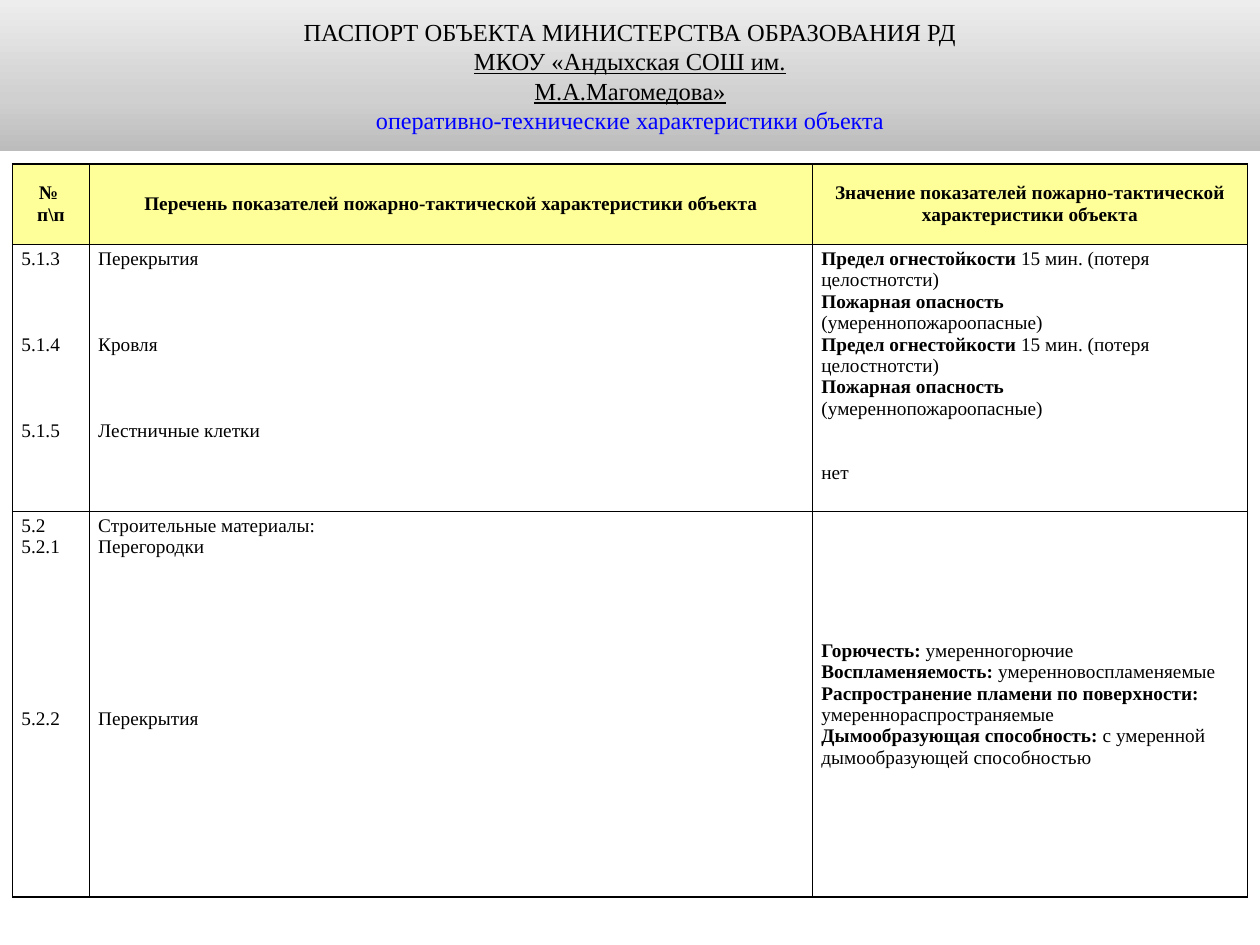
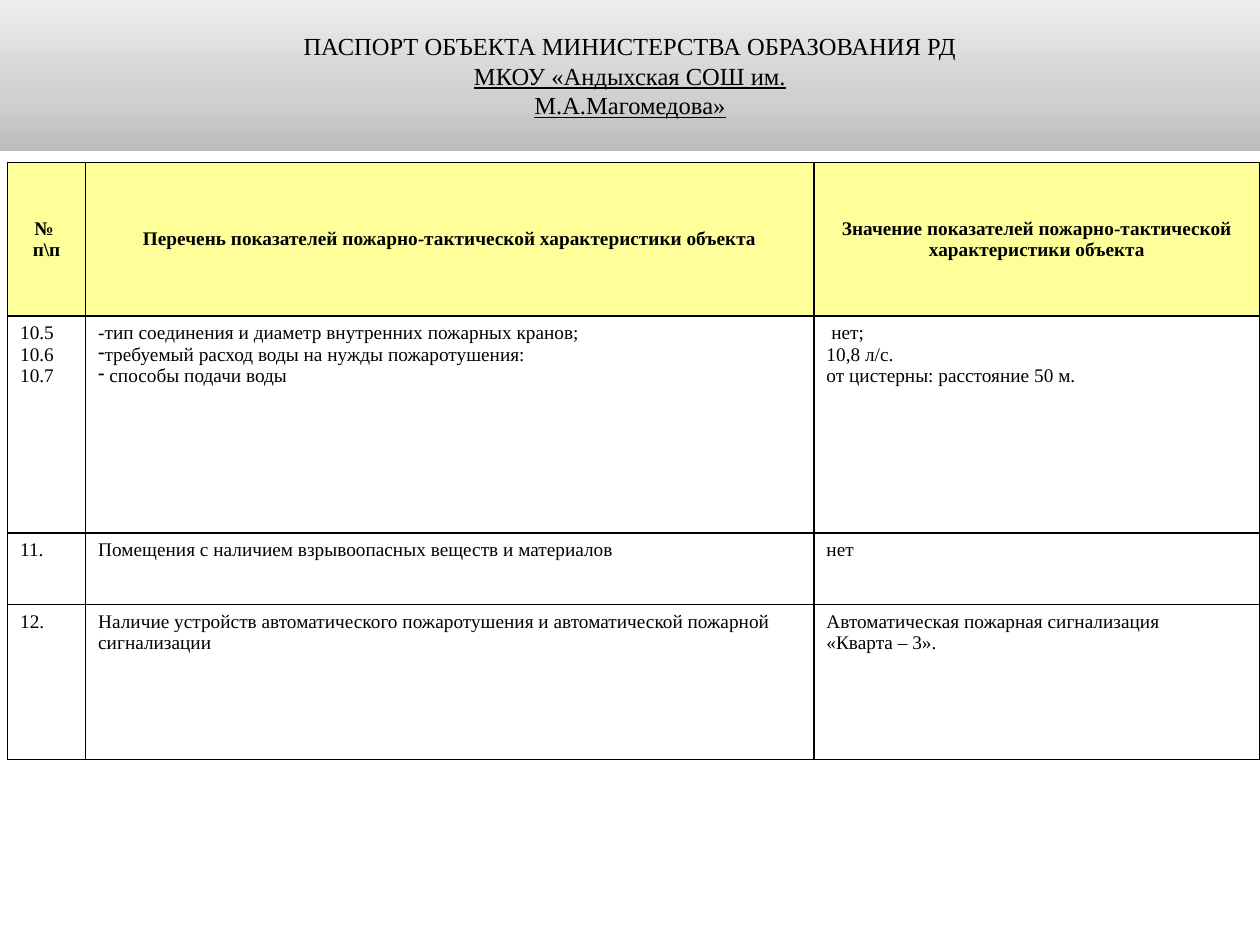
from dataclasses import dataclass

from lxml.etree import SubElement
from pptx import Presentation
from pptx.dml.color import RGBColor
from pptx.enum.text import MSO_ANCHOR, MSO_AUTO_SIZE, PP_ALIGN
from pptx.oxml import parse_xml
from pptx.oxml.ns import nsdecls, qn
from pptx.util import Inches, Pt

FONT = "Times New Roman"
COLORS = {
    "text": "000000",
    "accent": "0000FF",
    "border": "000000",
    "header": "FFFF99",
    "cell": "FFFFFF",
    "band_bottom": "BCBCBC",
    "band_middle": "D0D0D0",
    "band_top": "EDEDED",
}
BAND_STOPS = ((0, "band_bottom"), (35, "band_middle"), (100, "band_top"))
TABLE_SIZE, TITLE_SIZE = 11, 14
BLANK_LINE = 12.3  # points


@dataclass
class Line:
    """One paragraph: an optional bold lead, then text, after some blank lines."""
    text: str = ""
    lead: str = ""
    blank: int = 0
    bullet: str = ""
    underline: bool = False
    color: str = "text"
    size: float = 0


def write(tf, lines, size=TABLE_SIZE, bold=False, align=PP_ALIGN.LEFT):
    """Fill a text frame; each line is a string or a Line."""
    for i, line in enumerate(lines):
        if isinstance(line, str):
            line = Line(line)
        p = tf.paragraphs[0] if i == 0 else tf.add_paragraph()
        p.alignment = align
        p.space_before = Pt(line.blank * BLANK_LINE)
        if line.bullet:
            SubElement(p._p.get_or_add_pPr(), qn("a:buChar"), char=line.bullet)
        for text, is_bold in ((line.lead, True), (line.text, bold)):
            if not text:
                continue
            r = p.add_run()
            r.text = text
            r.font.name = FONT
            r.font.size = Pt(line.size or size)
            r.font.bold = is_bold
            r.font.underline = line.underline
            r.font.color.rgb = RGBColor.from_string(COLORS[line.color])


class Deck:
    def __init__(self):
        self.prs = Presentation()
        self.prs.slide_width, self.prs.slide_height = Inches(10), Inches(7.5)
        self.s = None

    def add_slide(self, title):
        self.s = self.prs.slides.add_slide(self.prs.slide_layouts[5])
        self.title_band(title)

    def title_band(self, lines):
        sp = self.s.shapes.title
        sp.left, sp.top, sp.width, sp.height = map(Inches, (0, 0, 10, 1.2))
        stops = "".join(
            f'<a:gs pos="{pos * 1000}"><a:srgbClr val="{COLORS[name]}"/></a:gs>'
            for pos, name in BAND_STOPS)
        sp._element.spPr.append(parse_xml(
            f'<a:gradFill {nsdecls("a")} rotWithShape="1"><a:gsLst>{stops}</a:gsLst>'
            '<a:lin ang="16200000" scaled="0"/></a:gradFill>'))
        tf = sp.text_frame
        tf.auto_size, tf.word_wrap = MSO_AUTO_SIZE.NONE, True
        tf.vertical_anchor = MSO_ANCHOR.MIDDLE
        tf.margin_left = tf.margin_right = Inches(0.08)
        tf.margin_top = tf.margin_bottom = Inches(0.04)
        write(tf, lines, size=TITLE_SIZE, align=PP_ALIGN.CENTER)

    def table(self, left, top, widths, heights, rows, margins, middle=()):
        """Draw the header and rows; middle lists the (row, column) cells centred vertically."""
        frame = self.s.shapes.add_table(
            len(heights), len(widths), Inches(left), Inches(top),
            Inches(sum(widths)), Inches(sum(heights)))
        table = frame.table
        table.horz_banding = False
        for column, width in zip(table.columns, widths):
            column.width = Inches(width)
        for row, height in zip(table.rows, heights):
            row.height = Inches(height)
        for i, row in enumerate([HEADER, *rows]):
            for j, lines in enumerate(row):
                self.cell(table.cell(i, j), lines, margins, i == 0, (i, j) in middle)

    def cell(self, cell, lines, margins, is_header, is_middle):
        cell.margin_left = cell.margin_right = Inches(margins[0])
        cell.margin_top = cell.margin_bottom = Inches(margins[1])
        cell.vertical_anchor = (
            MSO_ANCHOR.MIDDLE if is_header or is_middle else MSO_ANCHOR.TOP)
        self.borders(cell)
        cell.fill.solid()
        cell.fill.fore_color.rgb = RGBColor.from_string(
            COLORS["header" if is_header else "cell"])
        write(cell.text_frame, lines, bold=is_header,
              align=PP_ALIGN.CENTER if is_header else PP_ALIGN.LEFT)

    def borders(self, cell):
        tcPr = cell._tc.get_or_add_tcPr()
        for side in ("lnL", "lnR", "lnT", "lnB"):
            ln = SubElement(tcPr, qn(f"a:{side}"), w=str(Pt(1)))
            fill = SubElement(ln, qn("a:solidFill"))
            SubElement(fill, qn("a:srgbClr"), val=COLORS["border"])


TITLE = [
    "ПАСПОРТ ОБЪЕКТА МИНИСТЕРСТВА ОБРАЗОВАНИЯ РД",
    Line("МКОУ «Андыхская СОШ им.", underline=True),
    Line("М.А.Магомедова»", underline=True),
]
SUBTITLE = Line("оперативно-технические характеристики объекта",
                color="accent", size=13.8)
HEADER = [
    ["№ ", "п\\п"],
    ["Перечень показателей пожарно-тактической характеристики объекта"],
    ["Значение показателей пожарно-тактической характеристики объекта"],
]
FIRE_RATING = [
    Line("15 мин. (потеря целостнотсти)", lead="Предел огнестойкости "),
    Line(lead="Пожарная опасность"),
    "(умереннопожароопасные)",
]
STRUCTURE_ROWS = [
    [
        ["5.1.3", Line("5.1.4", blank=3), Line("5.1.5", blank=3)],
        ["Перекрытия", Line("Кровля", blank=3), Line("Лестничные клетки", blank=3)],
        [*FIRE_RATING, *FIRE_RATING, Line("нет", blank=2)],
    ],
    [
        ["5.2", "5.2.1", Line("5.2.2", blank=7)],
        ["Строительные материалы:", "Перегородки", Line("Перекрытия", blank=7)],
        [
            Line("умеренногорючие", lead="Горючесть: "),
            Line("умеренновоспламеняемые", lead="Воспламеняемость: "),
            Line(lead="Распространение пламени по поверхности:"),
            "умереннораспространяемые",
            Line("с умеренной дымообразующей способностью",
                 lead="Дымообразующая способность: "),
        ],
    ],
]
WATER_ROWS = [
    [
        ["10.5", "10.6", "10.7"],
        [
            "-тип соединения и диаметр внутренних пожарных кранов;",
            Line("требуемый расход воды на нужды пожаротушения:", bullet="-"),
            Line(" способы подачи воды", bullet="-"),
        ],
        [" нет;", "10,8 л/с.", "от цистерны: расстояние 50 м."],
    ],
    [
        ["11."],
        ["Помещения с наличием взрывоопасных веществ и материалов"],
        ["нет"],
    ],
    [
        ["12."],
        ["Наличие устройств автоматического пожаротушения и автоматической "
         "пожарной сигнализации"],
        ["Автоматическая пожарная сигнализация", "«Кварта – 3»."],
    ],
]


def main():
    deck = Deck()
    deck.add_slide([*TITLE, SUBTITLE])
    deck.table(0.1, 1.3, (0.61, 5.74, 3.45), (0.64, 2.12, 3.06),
               STRUCTURE_ROWS, margins=(0.07, 0.03), middle={(2, 2)})
    deck.add_slide(TITLE)
    deck.table(0.06, 1.29, (0.62, 5.78, 3.54), (1.22, 1.72, 0.57, 1.23),
               WATER_ROWS, margins=(0.1, 0.05))
    deck.prs.save("out.pptx")


if __name__ == "__main__":
    main()
